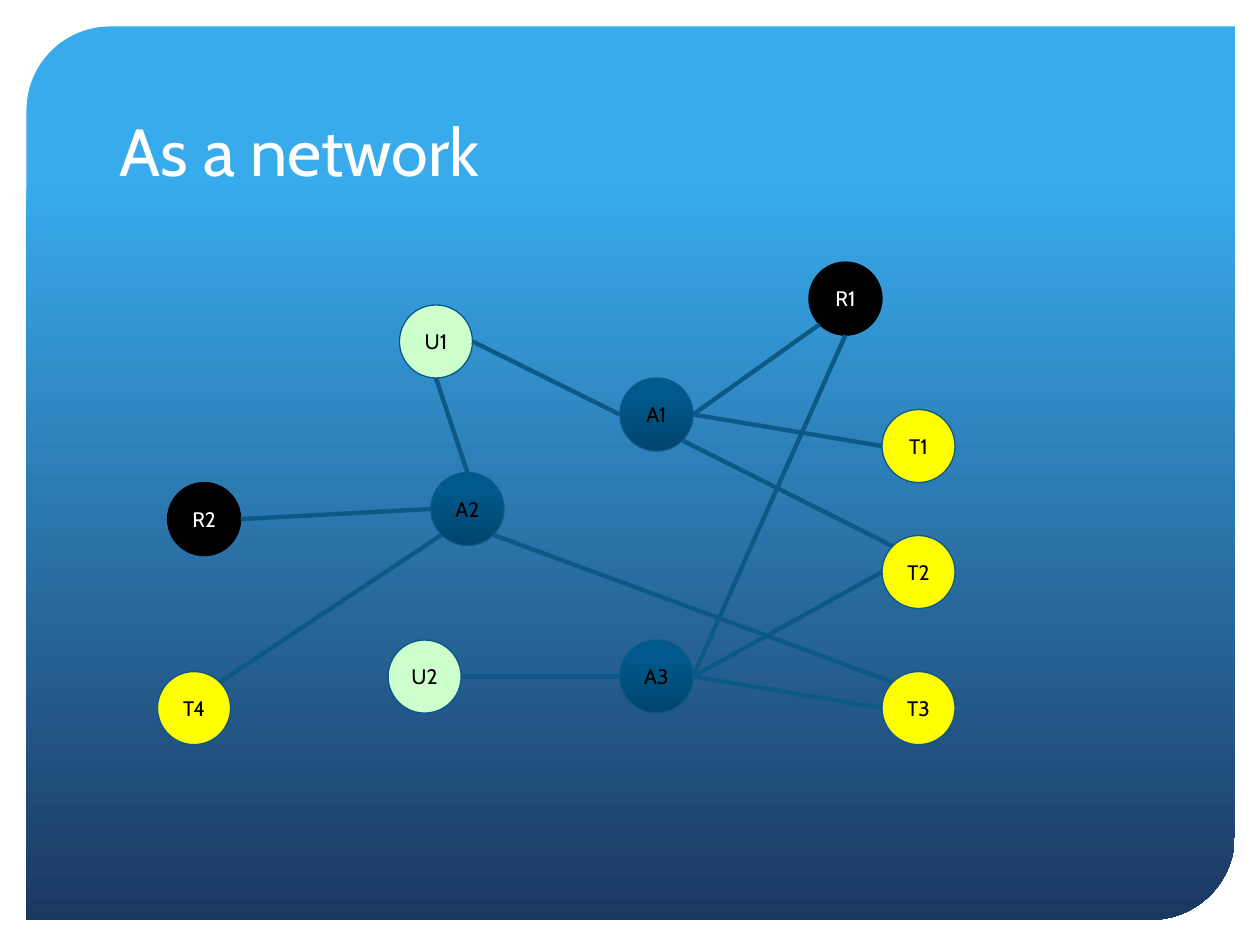
from dataclasses import dataclass
from math import sqrt

from lxml import etree
from pptx import Presentation
from pptx.dml.color import RGBColor
from pptx.enum import shapes, text
from pptx.oxml import ns
from pptx.util import Inches, Pt


@dataclass
class Theme:
    font: str = "Cabin"
    title_size: int = 38
    node_size: int = 12
    white: str = "FFFFFF"
    black: str = "000000"
    yellow: str = "FFFF00"
    mint: str = "CCFFCC"
    outline: str = "095886"
    link: str = "0C5986"
    panel: tuple = ((17, "38ABED"), (100, "1B3861"))
    agent: tuple = ((0, "00456D"), (80, "00598D"), (100, "005A8E"))


theme = Theme()


def fill_gradient(shape, stops, angle):
    shape.fill.solid()
    solid = shape.fill._xPr.find(ns.qn("a:solidFill"))
    gradient = etree.Element(ns.qn("a:gradFill"), rotWithShape="1")
    stop_list = etree.SubElement(gradient, ns.qn("a:gsLst"))
    for position, color in stops:
        stop = etree.SubElement(stop_list, ns.qn("a:gs"), pos=str(position * 1000))
        etree.SubElement(stop, ns.qn("a:srgbClr"), val=color)
    etree.SubElement(gradient, ns.qn("a:lin"), ang=str(angle * 60000), scaled="0")
    solid.getparent().replace(solid, gradient)


def add_span(para, words, size, color):
    span = para.add_run()
    span.text = words
    span.font.name = theme.font
    span.font.size = Pt(size)
    span.font.color.rgb = RGBColor.from_string(color)


deck = Presentation()
deck.slide_width, deck.slide_height = Inches(10), Inches(7.5)
page = deck.slides.add_slide(deck.slide_layouts[5])
page.background.fill.solid()
page.background.fill.fore_color.rgb = RGBColor.from_string(theme.white)

panel = page.shapes.add_shape(
    shapes.MSO_SHAPE.ROUND_2_DIAG_RECTANGLE,
    Inches(0.21), Inches(0.21), Inches(9.59), Inches(7.09))
panel.adjustments[0], panel.adjustments[1] = 0.094, 0
panel.shadow.inherit = False
panel.line.fill.background()
fill_gradient(panel, theme.panel, 90)

title = page.shapes.title
title.left, title.top = Inches(0.85), Inches(0.42)
title.width, title.height = Inches(8.29), Inches(1.14)
title.text_frame.vertical_anchor = text.MSO_ANCHOR.BOTTOM
title.text_frame.word_wrap = True
para = title.text_frame.paragraphs[0]
para.alignment = text.PP_ALIGN.LEFT
add_span(para, "As a network", theme.title_size, theme.white)
panel._element.addnext(title._element)

diameter = 0.58
nodes = {
    "A1": (4.92, 3), "A2": (3.42, 3.75), "A3": (4.92, 5.08),
    "U1": (3.17, 2.42), "U2": (3.08, 5.08),
    "R1": (6.42, 2.08), "R2": (1.33, 3.83),
    "T1": (7, 3.25), "T2": (7, 4.25), "T3": (7, 5.33), "T4": (1.25, 5.33),
}
styles = {
    "A": (theme.agent, theme.outline, theme.black),
    "U": (theme.mint, theme.outline, theme.black),
    "R": (theme.black, theme.black, theme.white),
    "T": (theme.yellow, theme.outline, theme.black),
}
for name, (left, top) in nodes.items():
    fill, outline, ink = styles[name[0]]
    node = page.shapes.add_shape(
        shapes.MSO_SHAPE.OVAL,
        Inches(left), Inches(top), Inches(diameter), Inches(diameter))
    node.shadow.inherit = False
    if name[0] == "A":
        fill_gradient(node, fill, 270)
    else:
        node.fill.solid()
        node.fill.fore_color.rgb = RGBColor.from_string(fill)
    node.line.color.rgb = RGBColor.from_string(outline)
    node.line.width = Pt(0.75)
    frame = node.text_frame
    frame.margin_left = frame.margin_right = 0
    frame.vertical_anchor = text.MSO_ANCHOR.MIDDLE
    para = frame.paragraphs[0]
    para.alignment = text.PP_ALIGN.CENTER
    add_span(para, name, theme.node_size, ink)

diagonal = 1 / sqrt(2)
compass = {
    "N": (0, -1), "E": (1, 0), "S": (0, 1), "W": (-1, 0),
    "NE": (diagonal, -diagonal), "SE": (diagonal, diagonal),
    "SW": (-diagonal, diagonal), "NW": (-diagonal, -diagonal),
}
links = [
    ("U1", "E", "A1", "W"), ("U1", "S", "A2", "N"), ("U2", "E", "A3", "W"),
    ("A3", "E", "R1", "S"), ("A1", "E", "R1", "SW"), ("A1", "E", "T1", "W"),
    ("A1", "SE", "T2", "NW"), ("A3", "E", "T2", "W"), ("A3", "E", "T3", "W"),
    ("R2", "E", "A2", "W"), ("T4", "NE", "A2", "SW"), ("T3", "NW", "A2", "SE"),
]
radius = diameter / 2
for start, start_side, end, end_side in links:
    ends = []
    for name, side in ((start, start_side), (end, end_side)):
        for corner, direction in zip(nodes[name], compass[side]):
            ends.append(Inches(corner + radius + radius * direction))
    link = page.shapes.add_connector(shapes.MSO_CONNECTOR.STRAIGHT, *ends)
    link.line.color.rgb = RGBColor.from_string(theme.link)
    link.line.width = Pt(2.5)
    etree.SubElement(link._element.spPr, ns.qn("a:effectLst"))

deck.save("out.pptx")
